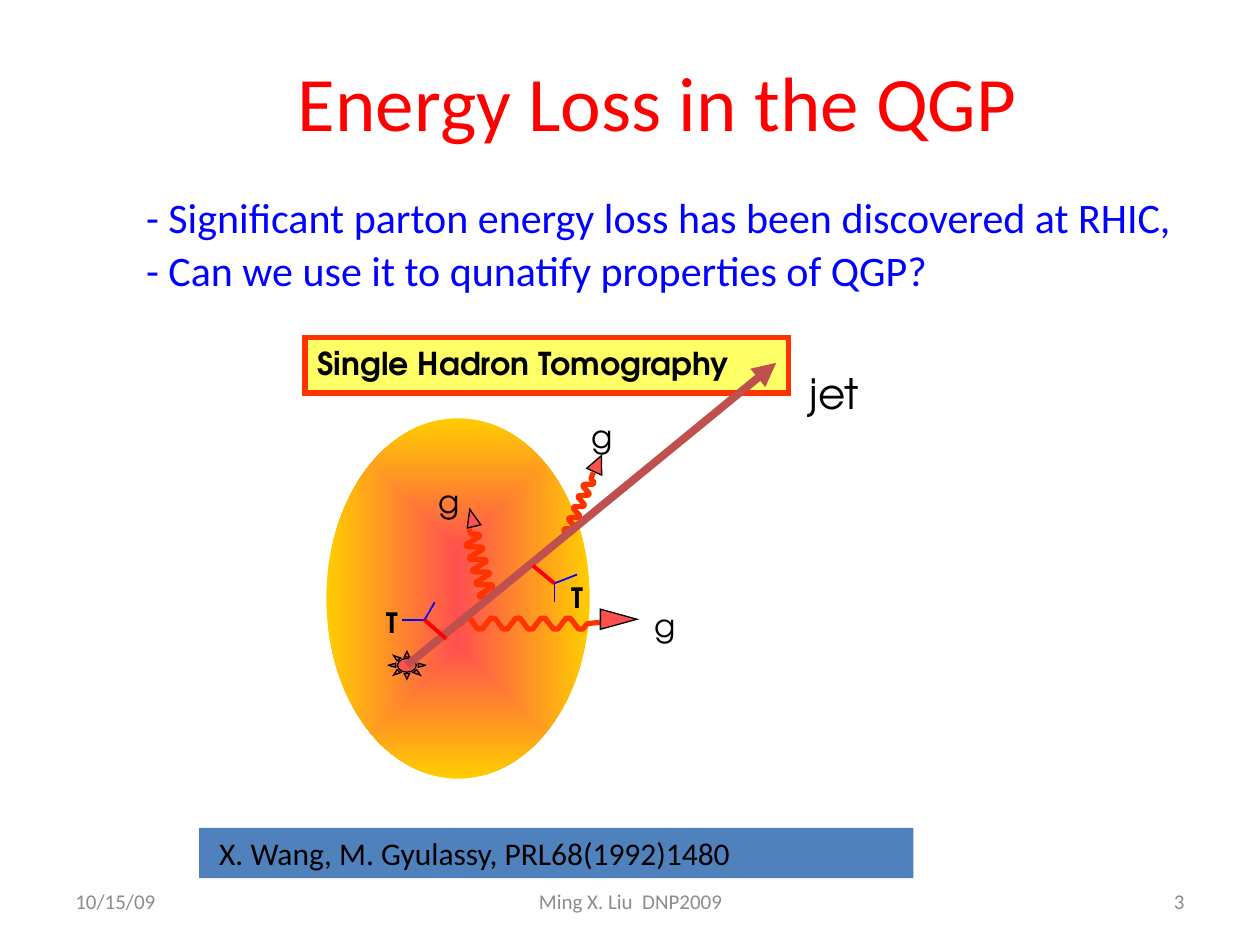
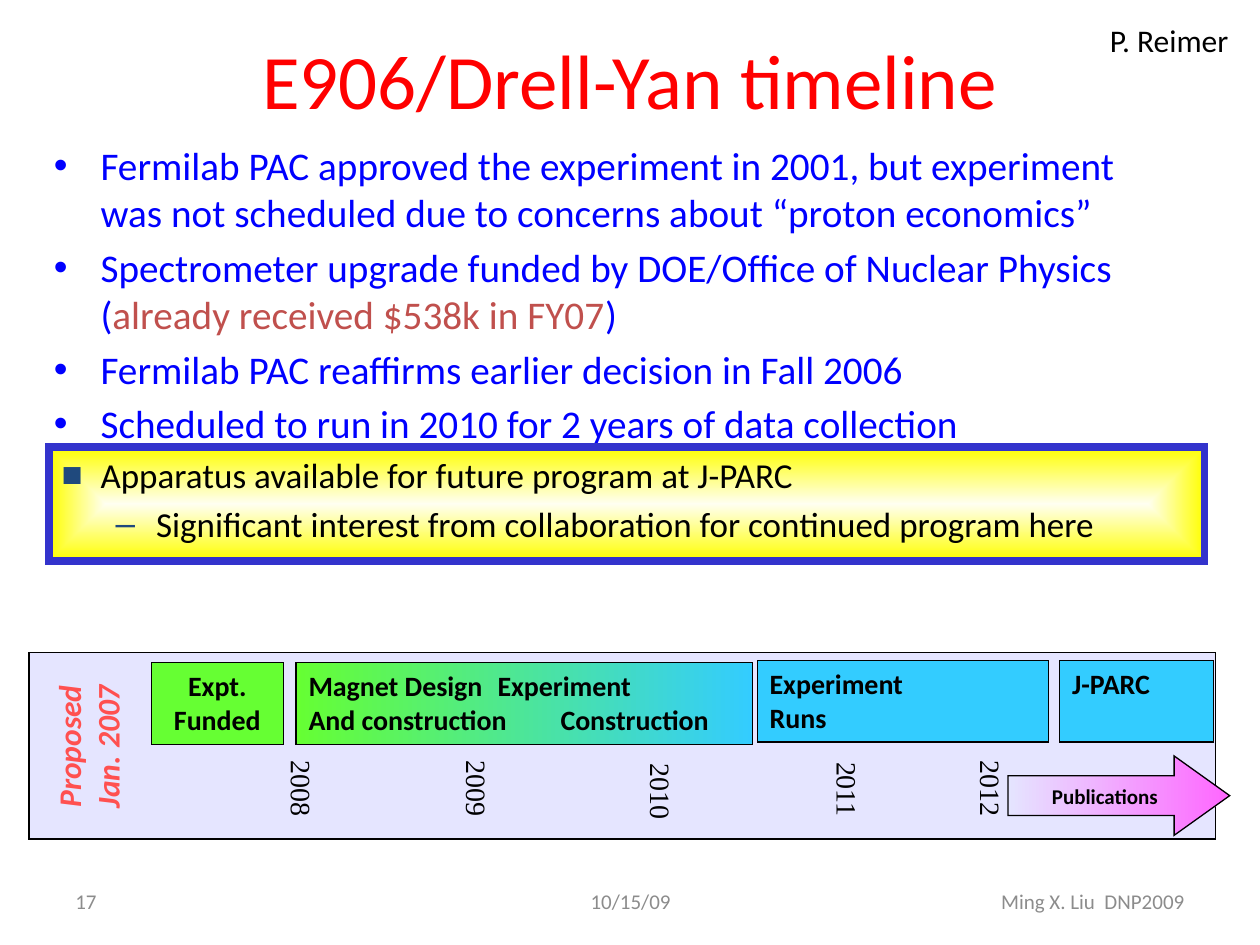
import math

from lxml import etree
from pptx import Presentation
from pptx.dml.color import RGBColor
from pptx.enum import shapes, text
from pptx.oxml.ns import qn
from pptx.util import Inches, Pt

# Colours and fonts
BLACK = RGBColor(0, 0, 0)
RED = RGBColor(0xFF, 0, 0)
BLUE = RGBColor(0, 0, 0xFF)
GREY = RGBColor(0x8C, 0x8C, 0x8C)
BRICK = RGBColor(0xC0, 0x50, 0x4D)
STEEL = RGBColor(0x4F, 0x81, 0xBD)
NAVY = RGBColor(0x1F, 0x49, 0x7D)
INDIGO = RGBColor(0x33, 0x33, 0xCC)
CORAL = RGBColor(0xFF, 0x50, 0x50)
GOLD = RGBColor(0xFF, 0xCC, 0)
FLAME = RGBColor(0xFF, 0x33, 0)
LEMON = RGBColor(0xFF, 0xFF, 0x66)
YELLOW = RGBColor(0xFF, 0xFF, 0)
CREAM = RGBColor(0xFF, 0xFF, 0xF1)
LAVENDER = RGBColor(0xE5, 0xE5, 0xFF)
PINK = RGBColor(0xFF, 0x66, 0xFF)
GREEN = RGBColor(0x66, 0xFF, 0x33)
SKY = RGBColor(0x33, 0xCC, 0xFF)
SANS, GEOMETRIC, SERIF = "Calibri", "TeX Gyre Adventor", "Times New Roman"

SHAPE = shapes.MSO_SHAPE
LEFT, CENTER, RIGHT = text.PP_ALIGN.LEFT, text.PP_ALIGN.CENTER, text.PP_ALIGN.RIGHT
MIDDLE = text.MSO_ANCHOR.MIDDLE

# Shared formats
TITLE = dict(size=44, color=RED, align=CENTER, anchor=MIDDLE)
FOOTER = dict(size=12, color=GREY, anchor=MIDDLE)
FOOTER_SLOTS = [((0.5, 6.95, 2.33, 0.4), LEFT), ((3.42, 6.95, 3.17, 0.4), CENTER),
                ((7.17, 6.95, 2.33, 0.4), RIGHT)]
THIN = (BLACK, 0.75)

# Energy loss slide
LOSS_POINTS = ["- Significant parton energy loss has been discovered at RHIC,",
               "- Can we use it to qunatify properties of QGP?"]
# root, start and end of the waves, tip, amplitude
GLUONS = [((3.62, 4.95), (3.66, 4.95), (4.66, 4.95), (4.76, 4.94), 0.05),
          ((4.5, 4.25), (4.5, 4.24), (4.69, 3.8), (4.71, 3.75), 0.04),
          ((3.88, 4.75), (3.87, 4.74), (3.74, 4.24), (3.72, 4.2), 0.07)]
GLUON_HEADS = [((4.83, 4.77, 0.16, 0.29), 90), ((4.68, 3.61, 0.13, 0.14), 24.1),
               ((3.69, 4.04, 0.11, 0.14), 346)]
GLUON_LABELS = [(4.6, 3.26), (5.1, 4.76), (3.38, 3.78)]
# vertex, ends of the two blue legs, end of the red leg
SCATTERINGS = [((3.37, 4.92), [(3.19, 4.92), (3.45, 4.78)], (3.54, 5.07)),
               ((4.4, 4.63), [(4.4, 4.78), (4.58, 4.56)], (4.23, 4.49))]
TARGET_LABELS = [(2.94, 4.76), (4.41, 4.56)]

# Timeline slide
HISTORY = [
    "Fermilab PAC approved the experiment in 2001, but experiment was not scheduled "
    "due to concerns about “proton economics”",
    [("Spectrometer upgrade funded by DOE/Office of Nuclear Physics (", BLUE),
     ("already received $538k in FY07", BRICK), (")", BLUE)],
    "Fermilab PAC reaffirms earlier decision in Fall 2006",
    "Scheduled to run in 2010 for 2 years of data collection",
]
FUTURE = ["Apparatus available for future program at J-PARC",
          "Significant interest from collaboration for continued program here"]
FUTURE_BULLETS = [dict(char="■", left=0.31, hang=0.31, color=NAVY),
                  dict(char="–", left=0.75, hang=0.32, color=NAVY)]
# left, top, width, fill, lines, alignment
PHASES = [
    (1.2, 5.26, 1.05, GREEN, ["Expt. Funded"], CENTER),
    (2.35, 5.26, 3.62, (GREEN, SKY),
     ["Magnet Design\tExperiment", "And construction\tConstruction"], LEFT),
    (6.01, 5.24, 2.31, SKY, ["Experiment", "Runs"], LEFT),
    (8.41, 5.24, 1.22, SKY, ["J-PARC"], LEFT),
]
PHASE_TABS = [1.5, 2.0]
YEARS = [("2008", 2.06, 6.09), ("2009", 3.45, 6.09), ("2010", 4.91, 6.11),
         ("2011", 6.39, 6.1), ("2012", 7.53, 6.09)]


def sub(parent, tag, **attrs):
    return etree.SubElement(parent, qn(tag), attrs)


def add_bullet(p, char, left, hang, color=None):
    pPr = p._p.get_or_add_pPr()
    pPr.set("marL", str(Inches(left)))
    pPr.set("indent", str(-Inches(hang)))
    if color is not None:
        sub(sub(pPr, "a:buClr"), "a:srgbClr", val=str(color))
    sub(pPr, "a:buFont", typeface="Arial")
    sub(pPr, "a:buChar", char=char)


def write(sp, lines, size=18, color=BLACK, font=SANS, bold=False, italic=False,
          align=LEFT, anchor=text.MSO_ANCHOR.TOP, wrap=True, inset=0.1,
          bullets=None, tabs=None, **spacing):
    """Fill a shape with paragraphs; a paragraph is a string or (text, colour) runs."""
    tf = sp.text_frame
    tf.word_wrap, tf.vertical_anchor, tf.margin_left = wrap, anchor, Inches(inset)
    for i, line in enumerate(lines):
        p = tf.add_paragraph() if i else tf.paragraphs[0]
        p.alignment = align
        for name, value in spacing.items():
            setattr(p, name, value)
        if bullets:
            add_bullet(p, **bullets[i])
        if tabs:
            tab_list = sub(p._p.get_or_add_pPr(), "a:tabLst")
            sub(tab_list, "a:tab", pos=str(Inches(tabs[i])), algn="l")
        for words, tint in [(line, color)] if isinstance(line, str) else line:
            r = p.add_run()
            r.text = words
            r.font.color.rgb = tint
            for name, value in dict(size=Pt(size), name=font, bold=bold,
                                    italic=italic).items():
                setattr(r.font, name, value)


def add_text(slide, box, lines, rotation=0, **fmt):
    sp = slide.shapes.add_textbox(*map(Inches, box))
    sp.rotation = rotation
    write(sp, lines, **fmt)


def paint(sp, fill=None, line=None, radial=False):
    """Fill is None, a colour, or a pair of gradient colours."""
    sp.shadow.inherit = False
    if fill is None:
        sp.fill.background()
    elif isinstance(fill, RGBColor):
        sp.fill.solid()
        sp.fill.fore_color.rgb = fill
    else:
        sp.fill.gradient()
        sp.fill.gradient_angle = 0
        for stop, color in zip(sp.fill.gradient_stops, fill):
            stop.color.rgb = color
        if radial:
            grad = sp._element.spPr.find(qn("a:gradFill"))
            grad.remove(grad.find(qn("a:lin")))
            sub(sub(grad, "a:path", path="shape"), "a:fillToRect",
                l="50000", t="50000", r="50000", b="50000")
    if line:
        sp.line.color.rgb, sp.line.width = line[0], Pt(line[1])
    else:
        sp.line.fill.background()


def add_shape(slide, kind, box, fill, line=None, rotation=0, radial=False, adjust=()):
    sp = slide.shapes.add_shape(kind, *map(Inches, box))
    sp.rotation = rotation
    for i, value in enumerate(adjust):
        sp.adjustments[i] = value
    paint(sp, fill, line, radial)
    if line:  # square corners
        sub(sp._element.spPr.find(qn("a:ln")), "a:miter", lim="800000")
    return sp


def add_line(slide, start, end, color, width, arrow=False):
    sp = slide.shapes.add_connector(shapes.MSO_CONNECTOR.STRAIGHT,
                                    *map(Inches, start + end))
    sp.line.color.rgb, sp.line.width = color, Pt(width)
    if arrow:
        sub(sp._element.spPr.find(qn("a:ln")), "a:tailEnd", type="triangle")
    sub(sp._element.spPr, "a:effectLst")


def add_gluon(slide, root, start, end, tip, amplitude, waves=5, steps=6):
    dx, dy = end[0] - start[0], end[1] - start[1]
    length = math.hypot(dx, dy)
    points = [root]
    for i in range(waves * steps + 1):
        along = i / (waves * steps)
        off = amplitude / length * math.sin(2 * math.pi * i / steps)
        points.append((start[0] + dx * along + dy * off,
                       start[1] + dy * along - dx * off))
    points = [(Inches(x), Inches(y)) for x, y in points + [tip]]
    builder = slide.shapes.build_freeform(*points[0])
    builder.add_line_segments(points[1:], close=False)
    paint(builder.convert_to_shape(), line=(FLAME, 3))


def new_slide(prs, title, title_box, footers):
    slide = prs.slides.add_slide(prs.slide_layouts[6])
    add_text(slide, title_box, [title], **TITLE)
    for (box, align), words in zip(FOOTER_SLOTS, footers):
        add_text(slide, box, [words], align=align, **FOOTER)
    return slide


def energy_loss(prs):
    slide = new_slide(prs, "Energy Loss in the QGP", (0.96, 0, 8.52, 1.6),
                      ["10/15/09", "Ming X. Liu  DNP2009", "3"])
    # Plasma, collision point and radiated gluons
    add_shape(slide, SHAPE.OVAL, (2.59, 3.32, 2.09, 2.86), (CORAL, GOLD), radial=True)
    add_shape(slide, SHAPE.SUN, (3.08, 5.17, 0.3, 0.22), CORAL, THIN)
    for gluon in GLUONS:
        add_gluon(slide, *gluon)
    for box, rotation in GLUON_HEADS:
        add_shape(slide, SHAPE.ISOSCELES_TRIANGLE, box, CORAL, THIN, rotation)
    # Heading and jet
    heading = add_shape(slide, SHAPE.RECTANGLE, (2.42, 2.68, 3.84, 0.44), LEMON, (FLAME, 3))
    write(heading, ["Single Hadron Tomography"], font=GEOMETRIC, bold=True)
    add_line(slide, (3.23, 5.28), (6.16, 2.88), BRICK, 4.5, arrow=True)
    add_text(slide, (6.33, 2.87, 0.84, 0.5), ["jet"], size=24, font=GEOMETRIC)
    for x, y in GLUON_LABELS:
        add_text(slide, (x, y, 0.33, 0.4), ["g"], font=GEOMETRIC)
    # Scattering targets
    for vertex, blue_ends, red_end in SCATTERINGS:
        for end in blue_ends:
            add_line(slide, vertex, end, BLUE, 1)
        add_line(slide, vertex, red_end, RED, 2.25)
    for x, y in TARGET_LABELS:
        add_text(slide, (x, y, 0.34, 0.37), ["T"], size=16, font=GEOMETRIC, bold=True,
                 align=CENTER, wrap=False)
    # Points and reference
    add_text(slide, (0.83, 1.52, 8.67, 1.17), LOSS_POINTS, size=24, color=BLUE,
             inset=0.33, line_spacing=0.9, space_before=Pt(4))
    source = add_shape(slide, SHAPE.RECTANGLE, (1.58, 6.57, 5.67, 0.4), STEEL)
    write(source, ["X. Wang, M. Gyulassy, PRL68(1992)1480"], inset=0.16)


def timeline(prs):
    slide = new_slide(prs, "E906/Drell-Yan timeline", (0.5, 0, 9, 1.25),
                      ["17", "10/15/09", "Ming X. Liu  DNP2009"])
    add_text(slide, (8.71, 0.12, 1.15, 0.4), ["P. Reimer"], wrap=False)
    add_text(slide, (0.33, 1.07, 9.17, 2.3), HISTORY, size=22.4, color=BLUE,
             space_before=Pt(4.5),
             bullets=[dict(char="•", left=0.37, hang=0.37)] * len(HISTORY))
    # Outlook box
    outlook = add_shape(slide, SHAPE.RECTANGLE, (0.39, 3.55, 9.17, 0.9), (CREAM, YELLOW),
                        (INDIGO, 4.5), radial=True)
    write(outlook, FUTURE, size=20, bullets=FUTURE_BULLETS,
          space_before=Pt(2), space_after=Pt(2))
    # Schedule
    add_shape(slide, SHAPE.RECTANGLE, (0.23, 5.18, 9.42, 1.48), LAVENDER, THIN)
    add_text(slide, (0.08, 5.62, 1.35, 0.61), ["Proposed", "Jan. 2007"], rotation=270,
             color=CORAL, bold=True, italic=True, align=CENTER, wrap=False,
             line_spacing=0.6, space_before=Pt(9))
    for x, y, width, fill, lines, align in PHASES:
        phase = add_shape(slide, SHAPE.RECTANGLE, (x, y, width, 0.65), fill, THIN)
        tabs = PHASE_TABS if "\t" in lines[0] else None
        write(phase, lines, size=16, bold=True, align=align, tabs=tabs)
    for year, x, y in YEARS:
        add_text(slide, (x, y, 0.67, 0.37), [year], rotation=90, size=16, font=SERIF)
    arrow = add_shape(slide, SHAPE.RIGHT_ARROW, (8, 6, 1.76, 0.63), (LAVENDER, PINK), THIN,
                      adjust=(0.5, 0.7))
    write(arrow, ["Publications"], size=12, bold=True, align=CENTER, anchor=MIDDLE,
          wrap=False)


def main():
    prs = Presentation()
    prs.slide_width, prs.slide_height = Inches(10), Inches(7.5)
    energy_loss(prs)
    timeline(prs)
    prs.save("out.pptx")


if __name__ == "__main__":
    main()
